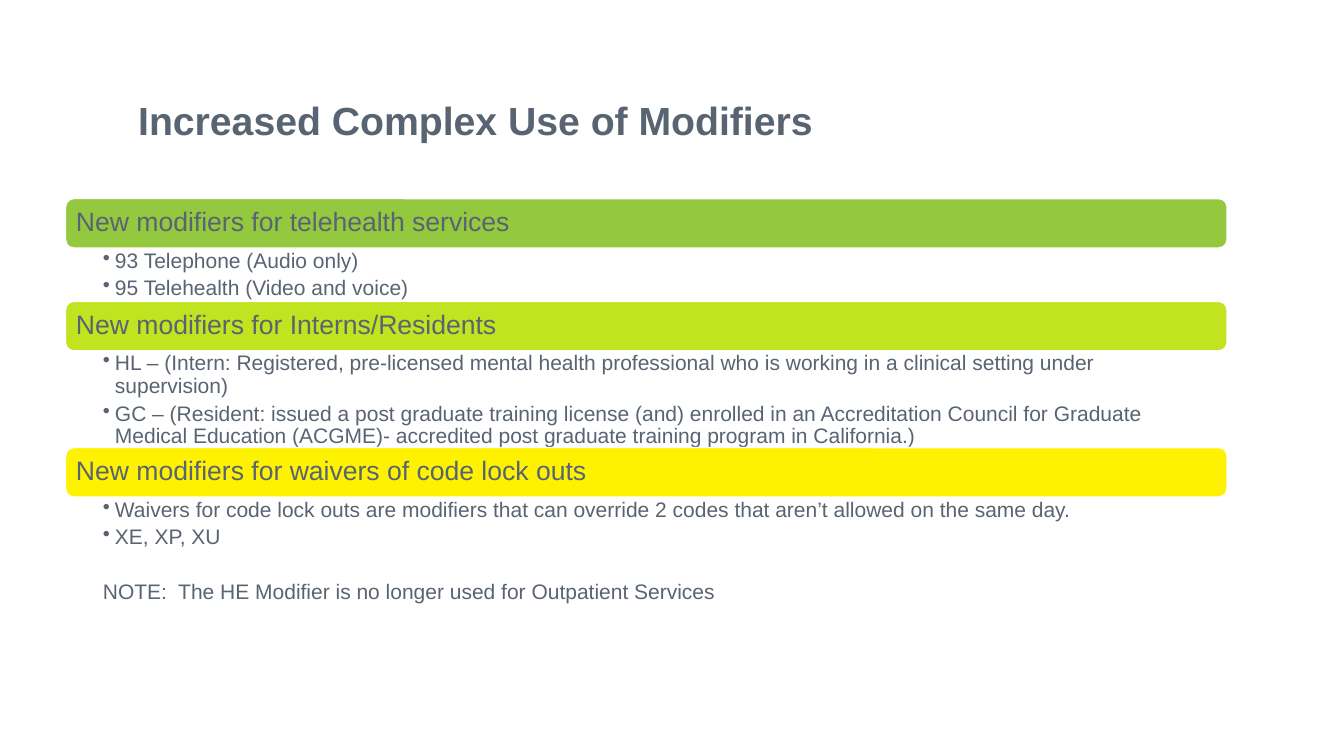
from pptx import Presentation
from pptx.dml.color import RGBColor
from pptx.enum import shapes, text
from pptx.oxml.ns import qn
from pptx.util import Inches, Pt
from lxml import etree

TITLE = "Increased Complex Use of Modifiers"
NOTE = "NOTE:  The HE Modifier is no longer used for Outpatient Services"
# heading, bar colour, height of the list in inches, bullets
SECTIONS = [
    ("New modifiers for telehealth services", "green", 0.54, [
        "93 Telephone (Audio only)",
        "95 Telehealth (Video and voice)",
    ]),
    ("New modifiers for Interns/Residents", "lime", 0.97, [
        "HL – (Intern: Registered, pre-licensed mental health professional "
        "who is working in a clinical setting under supervision)",
        "GC – (Resident: issued a post graduate training license (and) "
        "enrolled in an Accreditation Council for Graduate Medical Education "
        "(ACGME)- accredited post graduate training program in California.)",
    ]),
    ("New modifiers for waivers of code lock outs", "yellow", 1.08, [
        "Waivers for code lock outs are modifiers that can override 2 codes "
        "that aren’t allowed on the same day.",
        "XE, XP, XU",
        NOTE,
    ]),
]
COLORS = {"ink": "596473", "white": "FFFFFF",
          "green": "93C83F", "lime": "C2E320", "yellow": "FFF200"}
LEFT, WIDTH, FIRST_TOP = 0.65, 11.52, 1.97
BAR_HEIGHT, OVERLAP = 0.49, 0.01


def color(name):
    return RGBColor.from_string(COLORS[name])


def set_frame(frame, anchor, left, top, right, bottom):
    frame.word_wrap = True
    frame.auto_size = text.MSO_AUTO_SIZE.NONE
    frame.vertical_anchor = anchor
    frame.margin_left, frame.margin_top = Inches(left), Inches(top)
    frame.margin_right, frame.margin_bottom = Inches(right), Inches(bottom)


def style(para, size, bold=False):
    para.alignment = text.PP_ALIGN.LEFT
    para.line_spacing = 0.9
    for span in para.runs:
        span.font.name = "Arial"
        span.font.size = Pt(size)
        span.font.bold = bold
        span.font.color.rgb = color("ink")


def hang(para, bulleted):
    """Give the paragraph a hanging indent, with or without a bullet."""
    props = para._p.get_or_add_pPr()
    props.set("marL", str(Inches(0.12)))
    props.set("indent", str(-Inches(0.12)))
    if bulleted:
        etree.SubElement(props, qn("a:buChar")).set("char", "•")
    else:
        etree.SubElement(props, qn("a:buNone"))


def add_bar(page, top, heading, fill):
    bar = page.shapes.add_shape(
        shapes.MSO_SHAPE.ROUNDED_RECTANGLE, Inches(LEFT), Inches(top),
        Inches(WIDTH), Inches(BAR_HEIGHT))
    bar.shadow.inherit = False
    bar.fill.solid()
    bar.fill.fore_color.rgb = color(fill)
    bar.line.color.rgb = color("white")
    bar.line.width = Pt(1)
    set_frame(bar.text_frame, text.MSO_ANCHOR.MIDDLE, 0.08, 0.08, 0.08, 0.08)
    bar.text_frame.text = heading
    style(bar.text_frame.paragraphs[0], 19)


def add_list(page, top, height, items):
    box = page.shapes.add_textbox(
        Inches(LEFT), Inches(top), Inches(WIDTH), Inches(height))
    set_frame(box.text_frame, text.MSO_ANCHOR.TOP, 0.37, 0.03, 0.15, 0.03)
    box.text_frame.text = "\n".join(items)
    for para in box.text_frame.paragraphs:
        is_note = para.text == NOTE
        hang(para, bulleted=not is_note)
        style(para, 15)
        para.space_after = Pt(3.5)
        if is_note:
            para.space_before = Pt(19.2)


def main():
    deck = Presentation()
    deck.slide_width, deck.slide_height = Inches(13.33), Inches(7.5)
    page = deck.slides.add_slide(deck.slide_layouts[5])

    title = page.shapes.title
    title.left, title.top = Inches(1.37), Inches(0.96)
    title.width, title.height = Inches(9.33), Inches(0.86)
    set_frame(title.text_frame, text.MSO_ANCHOR.BOTTOM, 0, 0, 0, 0)
    # The title sits one empty line above the bottom of its box.
    title.height = Inches(0.47)
    title.text_frame.text = TITLE
    style(title.text_frame.paragraphs[0], 28, bold=True)

    top = FIRST_TOP
    for heading, fill, height, items in SECTIONS:
        add_bar(page, top, heading, fill)
        top += BAR_HEIGHT - OVERLAP
        add_list(page, top, height, items)
        top += height

    deck.save("out.pptx")


if __name__ == "__main__":
    main()
